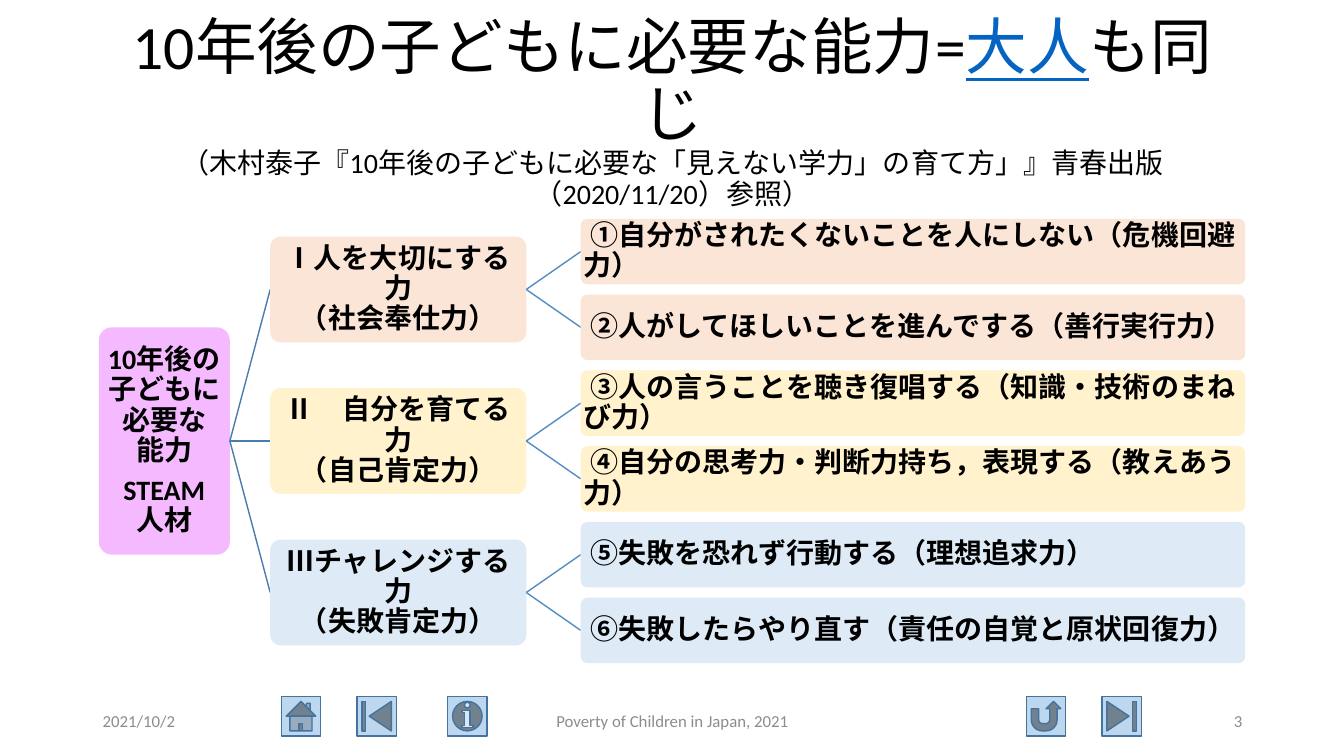
from lxml import etree
from pptx import Presentation
from pptx.dml.color import RGBColor
from pptx.enum.shapes import MSO_CONNECTOR, MSO_SHAPE
from pptx.enum.text import MSO_ANCHOR, MSO_AUTO_SIZE, PP_ALIGN
from pptx.oxml.ns import qn
from pptx.util import Inches, Pt

LEFT, CENTER, RIGHT = PP_ALIGN.LEFT, PP_ALIGN.CENTER, PP_ALIGN.RIGHT
MIDDLE = MSO_ANCHOR.MIDDLE
NO_FIT = MSO_AUTO_SIZE.NONE
STRAIGHT = MSO_CONNECTOR.STRAIGHT
ROUNDED = MSO_SHAPE.ROUNDED_RECTANGLE
BUTTONS = [
    (MSO_SHAPE.ACTION_BUTTON_HOME, 2.79),
    (MSO_SHAPE.ACTION_BUTTON_BEGINNING, 3.54),
    (MSO_SHAPE.ACTION_BUTTON_INFORMATION, 4.44),
    (MSO_SHAPE.ACTION_BUTTON_RETURN, 10.18),
    (MSO_SHAPE.ACTION_BUTTON_END, 10.93),
]
BLACK, GREY, BLUE = "000000", "8C8C8C", "0563C1"
TITLE = [
    ("10年後の子どもに必要な能力=", {"size": Pt(44)}, BLACK),
    ("大人", {"size": Pt(44), "underline": True}, BLUE),
    ("も同じ", {"size": Pt(44)}, BLACK),
]
SOURCE = "（木村泰子『10年後の子どもに必要な「見えない学力」の育て方」』青春出版（2020/11/20）参照）"
ROOT = ["10年後の\n子どもに\n必要な\n能力", "STEAM\n人材"]
BRANCHES = [
    ("Ⅰ人を大切にする力\n（社会奉仕力）", "FBE5D6",
     [" ①自分がされたくないことを人にしない（危機回避力）",
      " ②人がしてほしいことを進んでする（善行実行力）"]),
    ("Ⅱ\u3000自分を育てる力\n（自己肯定力）".replace("\u3000", "　"), "FFF2CC",
     [" ③人の言うことを聴き復唱する（知識・技術のまねび力）",
      " ④自分の思考力・判断力持ち，表現する（教えあう力）"]),
    ("Ⅲチャレンジする力\n（失敗肯定力）", "DEEBF7",
     [" ⑤失敗を恐れず行動する（理想追求力）",
      " ⑥失敗したらやり直す（責任の自覚と原状回復力）"]),
]
FOOTER = [
    ("2021/10/2", 0.92, 3, LEFT),
    ("Poverty of Children in Japan, 2021", 4.42, 4.5, CENTER),
    ("3", 9.42, 3, RIGHT),
]


def rgb(value):
    """Turn a hex string into a colour."""
    return RGBColor.from_string(value)


def apply(obj, formats):
    """Set each attribute of obj from a dict."""
    for name, value in formats.items():
        setattr(obj, name, value)


def style(font, color, **formats):
    """Format a font."""
    apply(font, {"name": "Calibri", **formats})
    font.color.rgb = rgb(color)


def add_box(slide, kind, box, fill):
    """Add a flat filled shape without an outline."""
    sp = slide.shapes.add_shape(kind, *map(Inches, box))
    sp.shadow.inherit = False
    sp.fill.solid()
    sp.fill.fore_color.rgb = rgb(fill)
    sp.line.fill.background()
    return sp


def add_node(slide, box, fill, paragraphs, align):
    """Add a rounded tree node with bold text."""
    sp = add_box(slide, ROUNDED, box, fill)
    sp.adjustments[0] = 0.1
    tf = sp.text_frame
    inset = Inches(0.01)
    apply(tf, {"word_wrap": True, "vertical_anchor": MIDDLE,
               "margin_left": inset, "margin_right": inset,
               "margin_top": inset, "margin_bottom": inset})
    for i, text in enumerate(paragraphs):
        p = tf.add_paragraph() if i else tf.paragraphs[0]
        p.text = text
        apply(p, {"alignment": align, "line_spacing": 0.9,
                  "space_after": Pt(7)})
        for r in p.runs:
            style(r.font, BLACK, size=Pt(20), bold=True)


def add_link(slide, start, end, color):
    """Join two points with a thin line."""
    cx = slide.shapes.add_connector(STRAIGHT, *map(Inches, start + end))
    cx.line.color.rgb = rgb(color)
    cx.line.width = Pt(1)
    etree.SubElement(cx._element.spPr, qn("a:effectLst"))


def add_title(slide, box):
    """Fill the title with the heading and its source."""
    sp = slide.shapes.title
    apply(sp, dict(zip(("left", "top", "width", "height"), map(Inches, box))))
    tf = sp.text_frame
    apply(tf, {"word_wrap": True, "vertical_anchor": MIDDLE,
               "auto_size": NO_FIT})
    p = tf.paragraphs[0]
    apply(p, {"alignment": CENTER, "line_spacing": 0.9})
    for text, formats, color in TITLE:
        r = p.add_run()
        r.text = text
        style(r.font, color, **formats)
    p.add_line_break()
    r = p.add_run()
    r.text = SOURCE
    style(r.font, BLACK, size=Pt(20))


def add_tree(slide, box):
    """Draw the root, its branches and their leaves from left to right."""
    x, y, w, h = box
    pitch = h / 6
    root_w, branch_w, branch_h, leaf_h = 1.3, 2.54, 1.05, 0.65
    branch_x, leaf_x = x + 1.7, x + 4.78
    middle = y + h / 2
    root_h = 3 * pitch
    add_node(slide, (x, middle - root_h / 2, root_w, root_h),
             "F5B9FF", ROOT, CENTER)
    for i, (name, fill, leaves) in enumerate(BRANCHES):
        branch_y = y + (2 * i + 1) * pitch
        add_link(slide, (x + root_w, middle), (branch_x, branch_y), "497CAB")
        add_node(slide, (branch_x, branch_y - branch_h / 2, branch_w, branch_h),
                 fill, [name], CENTER)
        for j, leaf in enumerate(leaves):
            leaf_y = branch_y + (j - 0.5) * pitch
            add_link(slide, (branch_x + branch_w, branch_y), (leaf_x, leaf_y),
                     "538DC1")
            add_node(slide, (leaf_x, leaf_y - leaf_h / 2, x + w - leaf_x, leaf_h),
                     fill, [leaf], LEFT)


def add_footer(slide, top, height):
    """Add the navigation buttons, date, footer and slide number."""
    size = 0.39
    for kind, left in BUTTONS:
        sp = add_box(slide, kind, (left, top - 0.04, size, size), "BDD7EE")
        sp.line.color.rgb = rgb("43739E")
        sp.line.width = Pt(1)
    for text, left, width, align in FOOTER:
        sp = slide.shapes.add_textbox(*map(Inches, (left, top, width, height)))
        tf = sp.text_frame
        apply(tf, {"word_wrap": True, "vertical_anchor": MIDDLE})
        p = tf.paragraphs[0]
        p.text = text
        p.alignment = align
        style(p.runs[0].font, GREY, size=Pt(12))


def main():
    """Build the slide and save it."""
    prs = Presentation()
    prs.slide_width, prs.slide_height = Inches(13.33), Inches(7.5)
    slide = prs.slides.add_slide(prs.slide_layouts[5])
    add_title(slide, (0.92, 0.4, 11.5, 1.45))
    add_tree(slide, (0.98, 2.12, 11.37, 4.51))
    add_footer(slide, 6.95, 0.4)
    prs.save("out.pptx")


if __name__ == "__main__":
    main()
